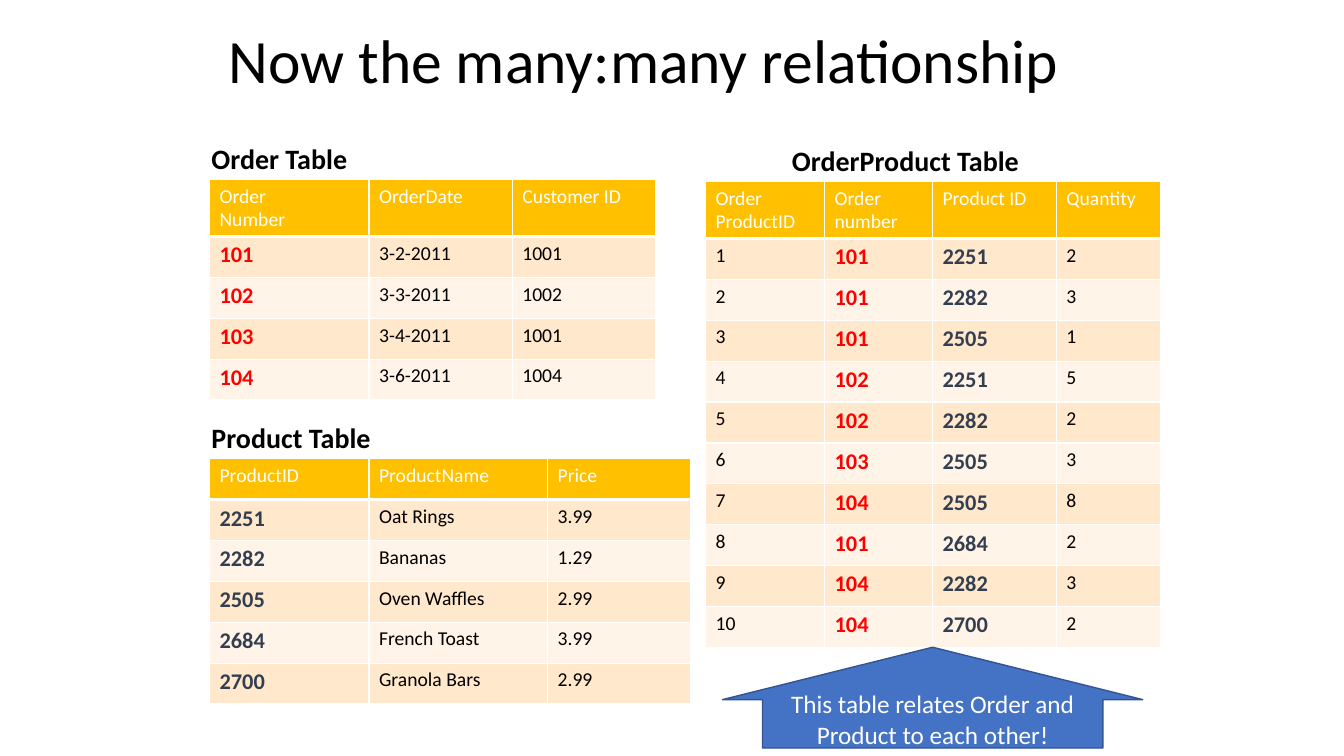
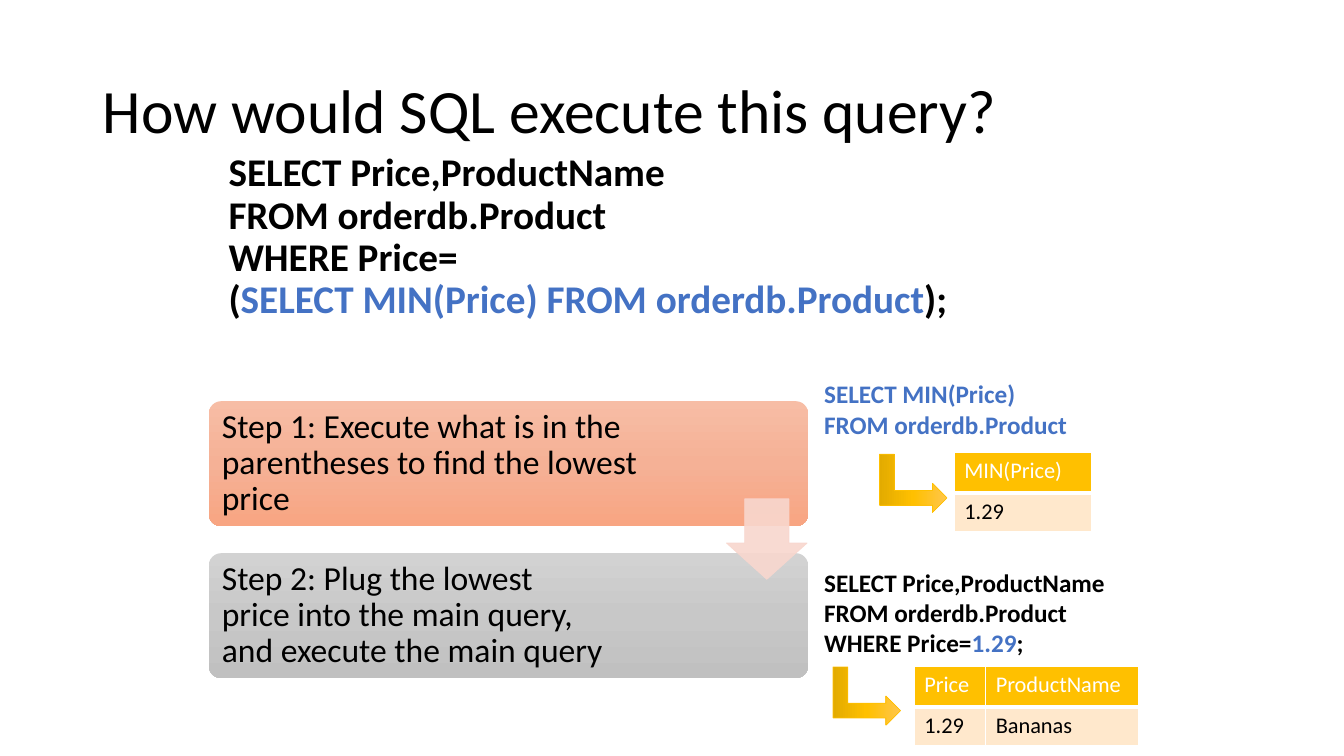
from copy import deepcopy
from dataclasses import dataclass

from lxml import etree
from pptx import Presentation
from pptx.dml.color import RGBColor
from pptx.enum import shapes, text
from pptx.oxml import ns
from pptx.util import Cm, Pt


@dataclass(frozen=True)
class Theme:
    font: str = "Calibri"
    # Colours
    ink: str = "000000"
    white: str = "FFFFFF"
    blue: str = "4472C4"
    blue_edge: str = "325491"
    gold: str = "FFC000"
    bands: tuple = ("FFE8CC", "FFF4E7")
    order_key: str = "FF0000"
    product_key: str = "333F50"
    pale_pink: str = "F8D7CE"
    salmon_fade: tuple = ("F7BDA5", "F5B196", "F8A582")
    grey_fade: tuple = ("D2D2D2", "C8C8C8", "C0C0C0")
    gold_fade: tuple = ("FFC64B", "FFC000", "E3AB00")
    # Type sizes in points
    title: int = 44
    code: int = 28
    step: int = 24
    heading: int = 20
    note: int = 18
    key: int = 16
    cell: int = 14


T = Theme()
ST = shapes.MSO_SHAPE


class Deck:
    def __init__(self):
        self.prs = Presentation()
        self.prs.slide_width, self.prs.slide_height = Cm(33.87), Cm(19.05)
        self.s = None

    def slide(self):
        self.s = self.prs.slides.add_slide(self.prs.slide_layouts[6])

    # Text
    def put_text(self, tf, words, size, color=T.ink, bold=False, accent=None,
                 **para):
        """One paragraph per line; the accent words turn blue."""
        for i, line in enumerate(words.split("\n")):
            p = tf.paragraphs[0] if i == 0 else tf.add_paragraph()
            for name, value in para.items():
                setattr(p, name, value)
            parts = line.partition(accent) if accent else (line,)
            for part in filter(None, parts):
                r = p.add_run()
                r.text = part
                look = {"name": T.font, "size": Pt(size), "bold": bold}
                for name, value in look.items():
                    setattr(r.font, name, value)
                r.font.color.rgb = RGBColor.from_string(
                    T.blue if part == accent else color)

    def text(self, box, words, size, wrap=False, anchor="TOP", **style):
        tf = self.s.shapes.add_textbox(*map(Cm, box)).text_frame
        tf.word_wrap = wrap
        tf.vertical_anchor = text.MSO_ANCHOR[anchor]
        self.put_text(tf, words, size, **style)

    def title(self, box, words):
        self.text(box, words, T.title, wrap=True, anchor="MIDDLE",
                  line_spacing=0.9)

    def heading(self, box, words):
        self.text(box, words, T.heading, bold=True)

    # Shapes
    def shape(self, kind, box, fill, line=None, width=0.5, adj=(), turn=0):
        """A tuple of three colours makes a top-to-bottom gradient."""
        sp = self.s.shapes.add_shape(kind, *map(Cm, box))
        sp.shadow.inherit = False
        sp.rotation = turn
        for i, value in enumerate(adj):
            sp.adjustments[i] = value
        if isinstance(fill, tuple):
            sp.fill.gradient()
            sp.fill.gradient_angle = 270
            stops = sp._element.spPr.find(".//" + ns.qn("a:gsLst"))
            stops.insert(1, deepcopy(stops[0]))
            for i, stop in enumerate(sp.fill.gradient_stops):
                stop.position = i / 2
                stop.color.rgb = RGBColor.from_string(fill[i])
        else:
            sp.fill.solid()
            sp.fill.fore_color.rgb = RGBColor.from_string(fill)
        if line:
            sp.line.color.rgb = RGBColor.from_string(line)
            sp.line.width = Pt(width)
        else:
            sp.line.fill.background()
        return sp

    def step(self, top, words, fade, right):
        sp = self.shape(ST.ROUNDED_RECTANGLE, (5.26, top, 15.11, 3.15), fade,
                        adj=(0.1,))
        tf = sp.text_frame
        layout = {"word_wrap": True, "vertical_anchor": text.MSO_ANCHOR.MIDDLE,
                  "margin_left": Cm(0.24), "margin_right": Cm(right),
                  "margin_top": Cm(0.25), "margin_bottom": Cm(0.25)}
        for name, value in layout.items():
            setattr(tf, name, value)
        self.put_text(tf, words, T.step, line_spacing=0.9,
                      alignment=text.PP_ALIGN.LEFT)

    def result_arrow(self, left, top):
        self.shape(ST.BENT_UP_ARROW, (left, top, 1.47, 1.7), T.gold_fade,
                   line=T.gold, turn=90)

    def fade_through(self, sp, percent):
        for color in sp._element.spPr.iter(ns.qn("a:srgbClr")):
            etree.SubElement(color, ns.qn("a:alpha"), val=str(percent * 1000))

    # Tables
    def border(self, cell, row):
        tcPr = cell._tc.get_or_add_tcPr()
        heavy = {0: "B", 1: "T"}.get(row)
        for i, side in enumerate("LRTB"):
            ln = etree.Element(ns.qn("a:ln" + side),
                               w=str(Pt(3 if side == heavy else 1)))
            fill = etree.SubElement(ln, ns.qn("a:solidFill"))
            etree.SubElement(fill, ns.qn("a:srgbClr"), val=T.white)
            tcPr.insert(i, ln)

    def table(self, left, top, widths, rows, keys=None, size=T.cell,
              last_height=1.03):
        """keys maps a column to the colour of its bold key values."""
        keys = keys or {}
        heights = [1.03] * (len(rows) - 1) + [last_height]
        tbl = self.s.shapes.add_table(
            len(rows), len(widths), Cm(left), Cm(top),
            Cm(sum(widths)), Cm(sum(heights))).table
        for column, width in zip(tbl.columns, widths):
            column.width = Cm(width)
        for row, height in zip(tbl.rows, heights):
            row.height = Cm(height)
        for i, values in enumerate(rows):
            for j, value in enumerate(values):
                cell = tbl.cell(i, j)
                cell.fill.solid()
                cell.fill.fore_color.rgb = RGBColor.from_string(
                    T.bands[(i - 1) % 2] if i else T.gold)
                self.border(cell, i)
                is_key = i > 0 and j in keys
                color = keys[j] if is_key else T.ink if i else T.white
                self.put_text(cell.text_frame, value,
                              T.key if is_key else size,
                              color=color, bold=is_key)


ORDERS = [
    ("Order\nNumber", "OrderDate", "Customer ID"),
    ("101", "3-2-2011", "1001"),
    ("102", "3-3-2011", "1002"),
    ("103", "3-4-2011", "1001"),
    ("104", "3-6-2011", "1004"),
]
PRODUCTS = [
    ("ProductID", "ProductName", "Price"),
    ("2251", "Oat Rings", "3.99"),
    ("2282", "Bananas", "1.29"),
    ("2505", "Oven Waffles", "2.99"),
    ("2684", "French Toast", "3.99"),
    ("2700", "Granola Bars", "2.99"),
]
ORDER_PRODUCTS = [
    ("Order\nProductID", "Order number", "Product ID", "Quantity"),
    ("1", "101", "2251", "2"),
    ("2", "101", "2282", "3"),
    ("3", "101", "2505", "1"),
    ("4", "102", "2251", "5"),
    ("5", "102", "2282", "2"),
    ("6", "103", "2505", "3"),
    ("7", "104", "2505", "8"),
    ("8", "101", "2684", "2"),
    ("9", "104", "2282", "3"),
    ("10", "104", "2700", "2"),
]


def relationship_slide(d):
    d.slide()
    d.title((5.51, 0, 22.86, 3.18), "Now the many:many relationship")

    # Order and product tables on the left
    d.table(5.28, 4.52, (4.02, 3.61, 3.61), ORDERS, {0: T.order_key})
    d.heading((5.08, 3.43, 3.96, 1.12), "Order Table")
    d.table(5.28, 11.56, (4.02, 4.5, 3.61), PRODUCTS, {0: T.product_key})
    d.heading((5.08, 10.46, 4.55, 1.12), "Product Table")

    # Linking table and its callout
    d.table(17.78, 4.57, (3, 2.72, 3.12, 2.64), ORDER_PRODUCTS,
            {1: T.order_key, 2: T.product_key})
    d.heading((19.71, 3.48, 6.27, 1.12), "OrderProduct Table")
    sp = d.shape(ST.UP_ARROW, (18.21, 16.31, 10.59, 2.54), T.blue,
                 line=T.blue_edge, width=1, adj=(0.81, 0.52))
    sp.text_frame.word_wrap = True
    sp.text_frame.vertical_anchor = text.MSO_ANCHOR.MIDDLE
    d.put_text(sp.text_frame,
               "This table relates Order and Product to each other!",
               T.note, color=T.white, alignment=text.PP_ALIGN.CENTER)


def query_slide(d):
    d.slide()
    d.title((2.34, 1.02, 29.21, 3.68), "How would SQL execute this query?")
    d.text((5.51, 3.73, 22.86, 14.17),
           "SELECT Price,ProductName\nFROM orderdb.Product\nWHERE Price=\n"
           "(SELECT MIN(Price) FROM orderdb.Product);",
           T.code, wrap=True, bold=True, line_spacing=0.9,
           accent="SELECT MIN(Price) FROM orderdb.Product")

    # Steps
    d.step(10.11, "Step 1: Execute what is in the parentheses to find the "
           "lowest price", T.salmon_fade, 3.34)
    d.step(13.94, "Step 2: Plug the lowest price into the main query, and "
           "execute the main query", T.grey_fade, 4.99)
    sp = d.shape(ST.DOWN_ARROW, (18.31, 12.57, 2.03, 2.03), T.pale_pink,
                 line=T.pale_pink, adj=(0.55, 0.45))
    d.fade_through(sp, 90)

    # Inner query and its result
    d.text((20.52, 9.42, 6.68, 1.8), "SELECT MIN(Price)\nFROM orderdb.Product",
           T.note, color=T.blue, bold=True)
    d.result_arrow(22.28, 11.33)
    d.table(24.05, 11.4, (3.45,), [("MIN(Price)",), ("1.29",)],
            size=T.key, last_height=0.96)

    # Main query and its result
    d.text((20.52, 14.17, 8.08, 2.57),
           "SELECT Price,ProductName\nFROM orderdb.Product\nWHERE Price=1.29;",
           T.note, wrap=True, bold=True, accent="1.29")
    d.result_arrow(21.11, 16.69)
    d.table(23.04, 16.79, (1.8, 3.86),
            [("Price", "ProductName"), ("1.29", "Bananas")],
            size=T.key, last_height=0.96)


def main():
    d = Deck()
    relationship_slide(d)
    query_slide(d)
    d.prs.save("out.pptx")


if __name__ == "__main__":
    main()
